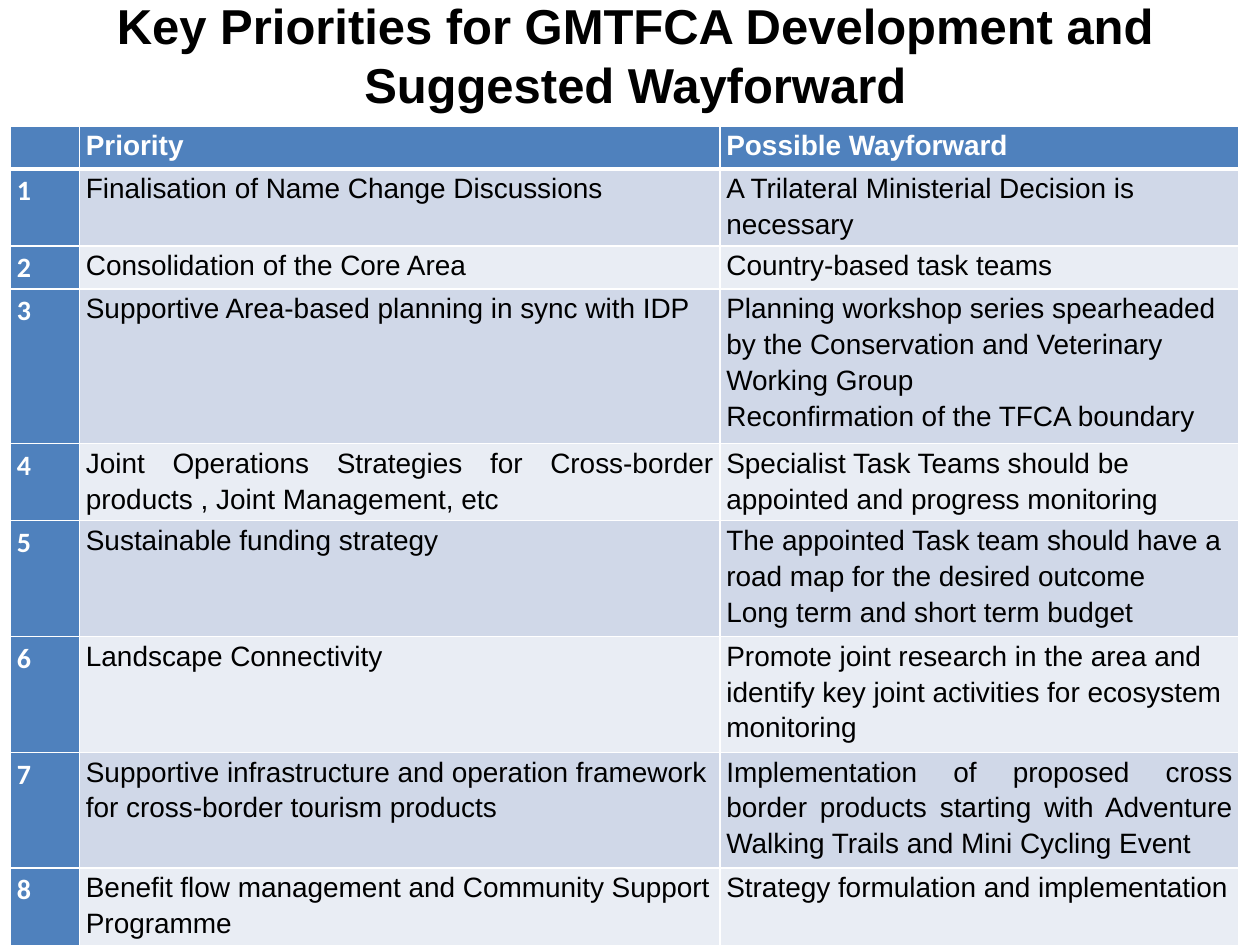
from lxml import etree
from pptx import Presentation
from pptx.dml.color import RGBColor
from pptx.enum.text import PP_ALIGN as AL
from pptx.oxml.ns import qn
from pptx.util import Pt

BLUE, WHITE, BLACK = "4F81BD", "FFFFFF", "000000"
BANDS = ["D0D8E8", "E9EDF4"]
L, J = AL.LEFT, AL.JUSTIFY
COL_WIDTHS = [39.5, 366, 296.5]
HEADER = ["", "Priority", "Possible Wayforward"]
HEADER_HEIGHT, SINGLE_HEIGHT, LINE_HEIGHT = 24.5, 24.5, 22

# Lines in the row, priority with alignment, way forward with alignment
PRIORITIES = [
    (2, "Finalisation of Name Change Discussions", L,
     "A Trilateral Ministerial Decision is necessary", L),
    (1, "Consolidation of the Core Area ", J, "Country-based task teams", J),
    (4, "Supportive Area-based planning in sync with IDP", J,
     "Planning workshop series spearheaded by the Conservation and Veterinary "
     "Working Group\nReconfirmation of the TFCA boundary", L),
    (2, "Joint Operations Strategies for Cross-border products , "
     "Joint Management, etc", J,
     "Specialist Task Teams should be appointed and progress monitoring", L),
    (3, "Sustainable funding strategy", J,
     "The appointed Task team should have a road map for the desired outcome\n"
     "Long term and short term budget", L),
    (3, "Landscape Connectivity", J,
     "Promote joint research in the area and identify key joint activities "
     "for ecosystem monitoring", L),
    (3, "Supportive infrastructure and operation framework for cross-border "
     "tourism products", L,
     "Implementation of proposed cross border products starting with "
     "Adventure Walking Trails and Mini Cycling Event", J),
    (2, "Benefit flow management and Community Support Programme", L,
     "Strategy formulation and implementation", L),
]


def rgb(value):
    return RGBColor.from_string(value)


def set_attrs(obj, **values):
    for name, value in values.items():
        setattr(obj, name, value)


def write(tf, text, size, color, bold, align, font="Arial", spacing=None):
    for i, line in enumerate(text.split("\n")):
        p = tf.add_paragraph() if i else tf.paragraphs[0]
        set_attrs(p, alignment=align, line_spacing=spacing)
        r = p.add_run()
        r.text = line
        set_attrs(r.font, name=font, size=Pt(size), bold=bold)
        r.font.color.rgb = rgb(color)


def set_borders(cell, bottom):
    tc_pr = cell._tc.get_or_add_tcPr()
    widths = {"a:lnL": 1, "a:lnR": 1, "a:lnT": 1, "a:lnB": bottom}
    for i, (tag, width) in enumerate(widths.items()):
        ln = etree.Element(qn(tag), w=str(Pt(width)))
        fill = etree.SubElement(ln, qn("a:solidFill"))
        etree.SubElement(fill, qn("a:srgbClr"), val=WHITE)
        tc_pr.insert(i, ln)


def style_cell(cell, text, fill, color, bold, align, font="Arial", bottom=1):
    set_attrs(cell, margin_left=Pt(3.6), margin_right=Pt(3.6),
              margin_top=0, margin_bottom=0)
    cell.fill.solid()
    cell.fill.fore_color.rgb = rgb(fill)
    set_borders(cell, bottom)
    if text:
        write(cell.text_frame, text, 16, color, bold, align, font, 1.15)


def add_title(slide, x, y, w, h):
    tf = slide.shapes.add_textbox(Pt(x), Pt(y), Pt(w), Pt(h)).text_frame
    tf.word_wrap = True
    write(tf, "Key Priorities for GMTFCA Development and Suggested Wayforward",
          28, BLACK, True, AL.CENTER)


def add_priorities(slide, x, y):
    heights = [HEADER_HEIGHT] + [max(SINGLE_HEIGHT, LINE_HEIGHT * row[0])
                                 for row in PRIORITIES]
    table = slide.shapes.add_table(
        len(heights), len(COL_WIDTHS), Pt(x), Pt(y),
        Pt(sum(COL_WIDTHS)), Pt(sum(heights))).table
    for col, width in zip(table.columns, COL_WIDTHS):
        col.width = Pt(width)
    for row, height in zip(table.rows, heights):
        row.height = Pt(height)

    # Header row
    for c, text in enumerate(HEADER):
        style_cell(table.cell(0, c), text, BLUE, WHITE, True, J, bottom=3)

    # Numbered rows in alternating bands
    for n, (_, priority, p_align, forward, f_align) in enumerate(PRIORITIES, 1):
        band = BANDS[(n - 1) % 2]
        style_cell(table.cell(n, 0), str(n), BLUE, WHITE, True, J, "Calibri")
        style_cell(table.cell(n, 1), priority, band, BLACK, False, p_align)
        style_cell(table.cell(n, 2), forward, band, BLACK, False, f_align)


def main():
    prs = Presentation()
    set_attrs(prs, slide_width=Pt(720), slide_height=Pt(540))
    slide = prs.slides.add_slide(prs.slide_layouts[6])
    add_title(slide, 18, -6, 690, 75)
    add_priorities(slide, 6, 72)
    prs.save("out.pptx")


if __name__ == "__main__":
    main()
